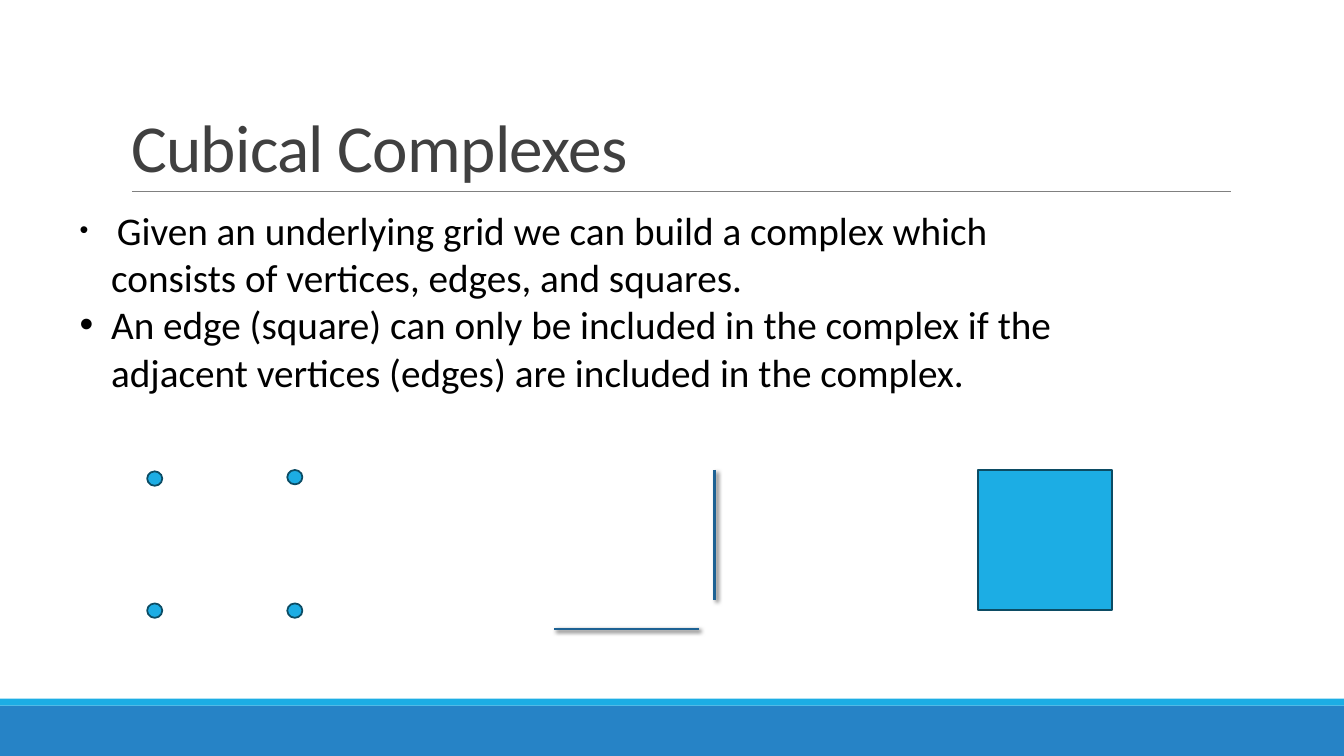
"""Build the slide on cubical complexes."""
from lxml import etree
from pptx import Presentation
from pptx.dml.color import RGBColor
from pptx.enum.shapes import MSO_CONNECTOR, MSO_SHAPE
from pptx.enum.text import MSO_ANCHOR, MSO_AUTO_SIZE, PP_ALIGN
from pptx.oxml import parse_xml
from pptx.oxml.ns import qn
from pptx.util import Pt

RECT, OVAL = MSO_SHAPE.RECTANGLE, MSO_SHAPE.OVAL
LINE = MSO_CONNECTOR.STRAIGHT
LEFT = PP_ALIGN.LEFT
TOP, BOTTOM = MSO_ANCHOR.TOP, MSO_ANCHOR.BOTTOM
FIXED = MSO_AUTO_SIZE.NONE

FONT = "Calibri"
SKY, BLUE, EDGE, RIM = "1CADE4", "2683C6", "1D6294", "0C4C64"
TITLE = "Cubical Complexes"
POINTS = [
    (" ", "Given an underlying grid we can build a complex which "
          "consists of vertices, edges, and squares."),
    ("", "An edge (square) can only be included in the complex if the "
         "adjacent vertices (edges) are included in the complex."),
]
BANDS = [((0, 504, 960, 36), BLUE), ((0, 499, 960, 5), SKY)]
RULE = (94.3, 136.8, 879.1, 136.8)
EDGES = [(396, 449.3, 499.4, 449.3), (510.5, 335.7, 510.5, 428.5)]
DOTS = [(105.1, 336.7), (105.1, 431), (205.2, 335.7), (205.2, 431)]
DOT = (10.8, 10.3)
SQUARE = (698.4, 335.7, 95.9, 100.3)
SHADOW = """<a:effectLst
 xmlns:a="http://schemas.openxmlformats.org/drawingml/2006/main">
<a:outerShdw blurRad="38100" dist="25400" dir="2700000" rotWithShape="0">
<a:srgbClr val="000000"><a:alpha val="60000"/></a:srgbClr>
</a:outerShdw></a:effectLst>"""

prs = Presentation()
prs.slide_width, prs.slide_height = Pt(960), Pt(540)
slide = prs.slides.add_slide(prs.slide_layouts[1])
shapes = slide.shapes


def tint(hue):
    return RGBColor.from_string(hue)


def draw(kind, box, fill, rim=None):
    item = shapes.add_shape(kind, *map(Pt, box))
    item.shadow.inherit = False
    item.fill.solid()
    item.fill.fore_color.rgb = tint(fill)
    if rim:
        item.line.color.rgb = tint(rim)
        item.line.width = Pt(1.25)
    else:
        item.line.fill.background()


def link(ends, hue, width):
    item = shapes.add_connector(LINE, *map(Pt, ends))
    item.line.color.rgb = tint(hue)
    item.line.width = Pt(width)
    return item.element.spPr


def place(item, box, anchor):
    item.left, item.top, item.width, item.height = map(Pt, box)
    frame = item.text_frame
    frame.word_wrap = True
    frame.auto_size = FIXED
    frame.vertical_anchor = anchor
    return frame


def style(para, size, hue, lead):
    para.alignment = LEFT
    para.line_spacing = lead
    para.space_before = para.space_after = Pt(0)
    para.font.name = FONT
    para.font.size = Pt(size)
    para.font.color.rgb = tint(hue)


def dot_list(para):
    props = para._p.get_or_add_pPr()
    props.set("marL", str(Pt(22.5)))
    props.set("indent", str(Pt(-22.5)))
    face = etree.Element(qn("a:buFont"), typeface="Arial")
    mark = etree.Element(qn("a:buChar"), char="•")
    spot = props.index(props.find(qn("a:defRPr")))
    props[spot:spot] = [face, mark]


for box, hue in BANDS:
    draw(RECT, box, hue)
etree.SubElement(link(RULE, "808080", 0.5), qn("a:effectLst"))

head = place(shapes.title, (86.4, 22.3, 792, 114.5), BOTTOM).paragraphs[0]
run = head.add_run()
run.text = TITLE
run._r.get_or_add_rPr().set("spc", "-50")
style(head, 48, "404040", 0.85)

body = place(slide.placeholders[1], (49.7, 144, 730, 143.3), TOP)
for i, (gap, text) in enumerate(POINTS):
    para = body.add_paragraph() if i else body.paragraphs[0]
    if gap:
        run = para.add_run()
        run.text = gap
        run.font.size = Pt(18)
    para.add_run().text = text
    style(para, 28, "000000", 1.0)
    dot_list(para)

for ends in EDGES:
    link(ends, EDGE, 2).append(parse_xml(SHADOW))
for spot in DOTS:
    draw(OVAL, spot + DOT, SKY, RIM)
draw(RECT, SQUARE, SKY, RIM)

prs.save("out.pptx")
